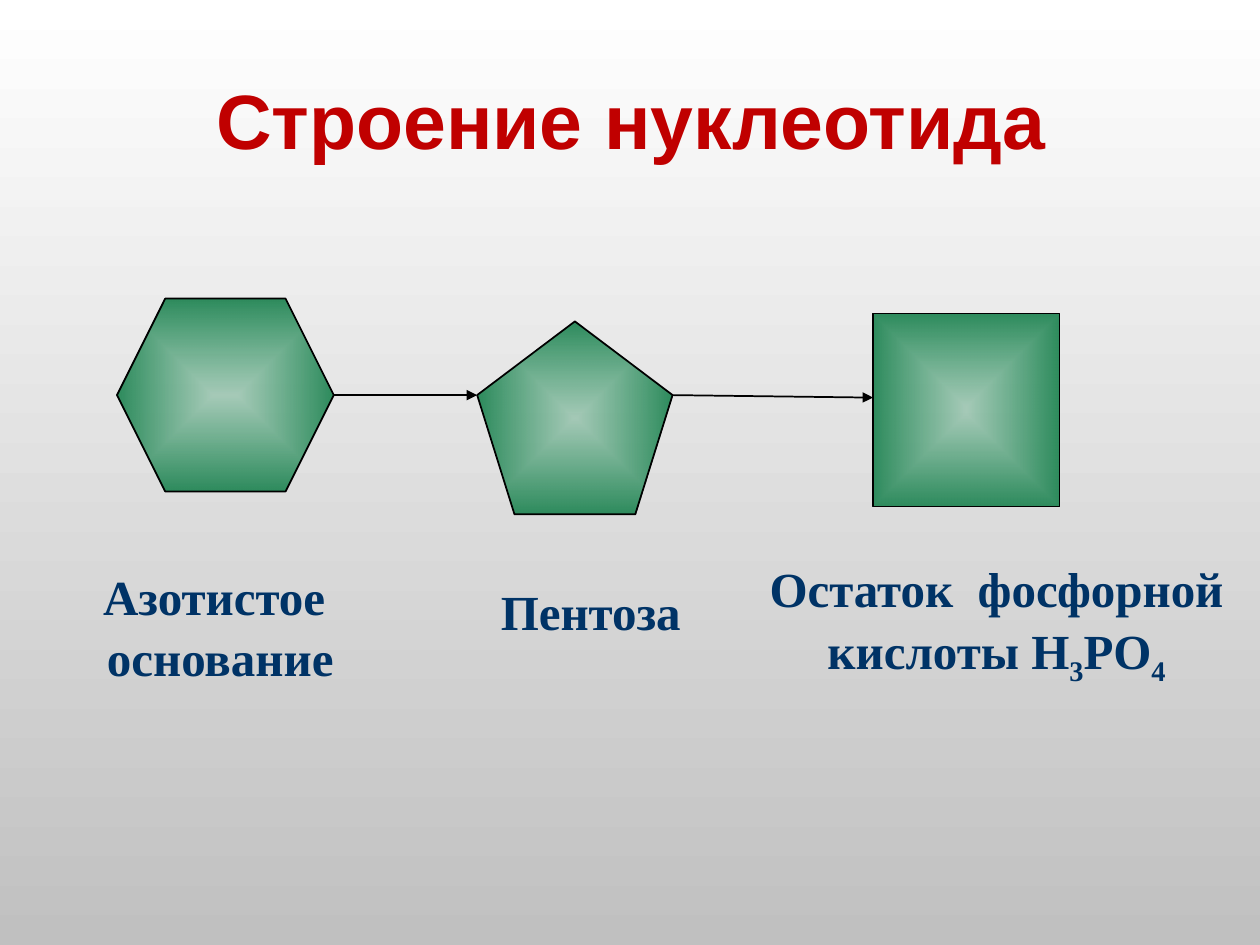
from lxml import etree
from pptx import Presentation
from pptx.dml.color import RGBColor
from pptx.enum.shapes import MSO_CONNECTOR, MSO_SHAPE
from pptx.enum.text import MSO_ANCHOR, MSO_AUTO_SIZE, PP_ALIGN
from pptx.oxml import parse_xml
from pptx.oxml.ns import nsdecls, qn
from pptx.util import Cm, Pt

STRAIGHT = MSO_CONNECTOR.STRAIGHT
HEXAGON, PENTAGON, SQUARE = (
    MSO_SHAPE.HEXAGON, MSO_SHAPE.REGULAR_PENTAGON, MSO_SHAPE.RECTANGLE)
CENTER, MIDDLE, TOP = PP_ALIGN.CENTER, MSO_ANCHOR.MIDDLE, MSO_ANCHOR.TOP
FIT_SHAPE = MSO_AUTO_SIZE.SHAPE_TO_FIT_TEXT

WHITE = RGBColor(0xFF, 0xFF, 0xFF)
SILVER = RGBColor(0xC0, 0xC0, 0xC0)
RED = RGBColor(0xC0, 0x00, 0x00)
NAVY = RGBColor(0x00, 0x33, 0x66)
BLACK = RGBColor(0x00, 0x00, 0x00)
GREEN = RGBColor(0x33, 0x99, 0x66)
DARK_GREEN = RGBColor(0x2E, 0x8B, 0x5D)

TITLE_FONT = dict(name="Arial", size=Pt(44), bold=True)
LABEL_FONT = dict(name="Times New Roman", size=Pt(28), bold=True)


def add_text(slide, box, paragraphs, font, color, wrap=True, anchor=TOP,
             spacing=1.0):
    """Centred text; each paragraph is a list of (text, is_subscript)."""
    tb = slide.shapes.add_textbox(*map(Cm, box))
    tf = tb.text_frame
    tf.word_wrap, tf.vertical_anchor = wrap, anchor
    for i, runs in enumerate(paragraphs):
        p = tf.add_paragraph() if i else tf.paragraphs[0]
        p.alignment, p.line_spacing = CENTER, spacing
        for text, subscript in runs:
            r = p.add_run()
            r.text = text
            for key, value in font.items():
                setattr(r.font, key, value)
            r.font.color.rgb = color
            if subscript:
                r.font._element.set("baseline", "-25000")
    return tf


def add_background(slide):
    fill = slide.background.fill
    fill.gradient()
    fill.gradient_angle = 270
    for stop, position, color in zip(fill.gradient_stops, (0, 1), (WHITE, SILVER)):
        stop.position = position
        stop.color.rgb = color


def add_figure(slide, kind, box):
    """Outlined shape, lighter towards its centre."""
    s = slide.shapes.add_shape(kind, *map(Cm, box))
    s.shadow.inherit = False
    s.line.color.rgb = BLACK
    s.line.width = Pt(1)
    gradient = parse_xml(
        f'<a:gradFill {nsdecls("a")} rotWithShape="1"><a:gsLst>'
        f'<a:gs pos="0"><a:srgbClr val="{GREEN}"><a:alpha val="35000"/></a:srgbClr></a:gs>'
        f'<a:gs pos="100000"><a:srgbClr val="{DARK_GREEN}"/></a:gs></a:gsLst>'
        '<a:path path="rect"><a:fillToRect l="50000" t="50000" r="50000" b="50000"/>'
        '</a:path></a:gradFill>')
    s._element.spPr.find(qn("a:prstGeom")).addnext(gradient)


def add_arrow(slide, start, end):
    s = slide.shapes.add_connector(STRAIGHT, *map(Cm, start + end))
    s.line.color.rgb = BLACK
    s.line.width = Pt(1)
    etree.SubElement(s.line._get_or_add_ln(), qn("a:tailEnd"), type="triangle")
    etree.SubElement(s._element.spPr, qn("a:effectLst"))


def add_nucleotide(slide, left, top):
    """Three parts of a nucleotide in a row, with labels below."""
    # Labels: offset and size, wrapping, paragraphs
    labels = [
        ((-0.56, 5.21, 5.28, 2.67), False,
         [[("Азотистое ", False)], [("основание", False)]]),
        ((7.11, 5.51, 4.88, 1.45), True, [[("Пентоза", False)]]),
        ((12.83, 5.05, 9.8, 3.86), True,
         [[("Остаток  фосфорной кислоты H", False), ("3", True),
           ("PO", False), ("4", True)]]),
    ]
    for (x, y, w, h), wrap, paragraphs in labels:
        tf = add_text(slide, (left + x, top + y, w, h), paragraphs,
                      LABEL_FONT, NAVY, wrap, spacing=1.05)
        tf.auto_size = FIT_SHAPE

    # Figures share one height
    height = 3.89
    figures = [(HEXAGON, 0, 0, 4.37), (PENTAGON, 7.26, 0.46, 3.94),
               (SQUARE, 15.24, 0.3, 3.76)]
    for kind, x, y, w in figures:
        add_figure(slide, kind, (left + x, top + y, w, height))

    # Arrows between neighbours
    mid = top + height / 2
    for x1, x2, drop in ((4.37, 7.26, 0), (11.2, 15.24, 0.05)):
        add_arrow(slide, (left + x1, mid), (left + x2, mid + drop))


def main():
    prs = Presentation()
    prs.slide_width, prs.slide_height = Cm(25.4), Cm(19.05)
    slide = prs.slides.add_slide(prs.slide_layouts[6])
    add_background(slide)
    add_text(slide, (0.79, 0.43, 23.88, 3.94), [[("Строение нуклеотида", False)]],
             TITLE_FONT, RED, anchor=MIDDLE)
    add_nucleotide(slide, left=2.36, top=6.02)
    prs.save("out.pptx")


if __name__ == "__main__":
    main()
